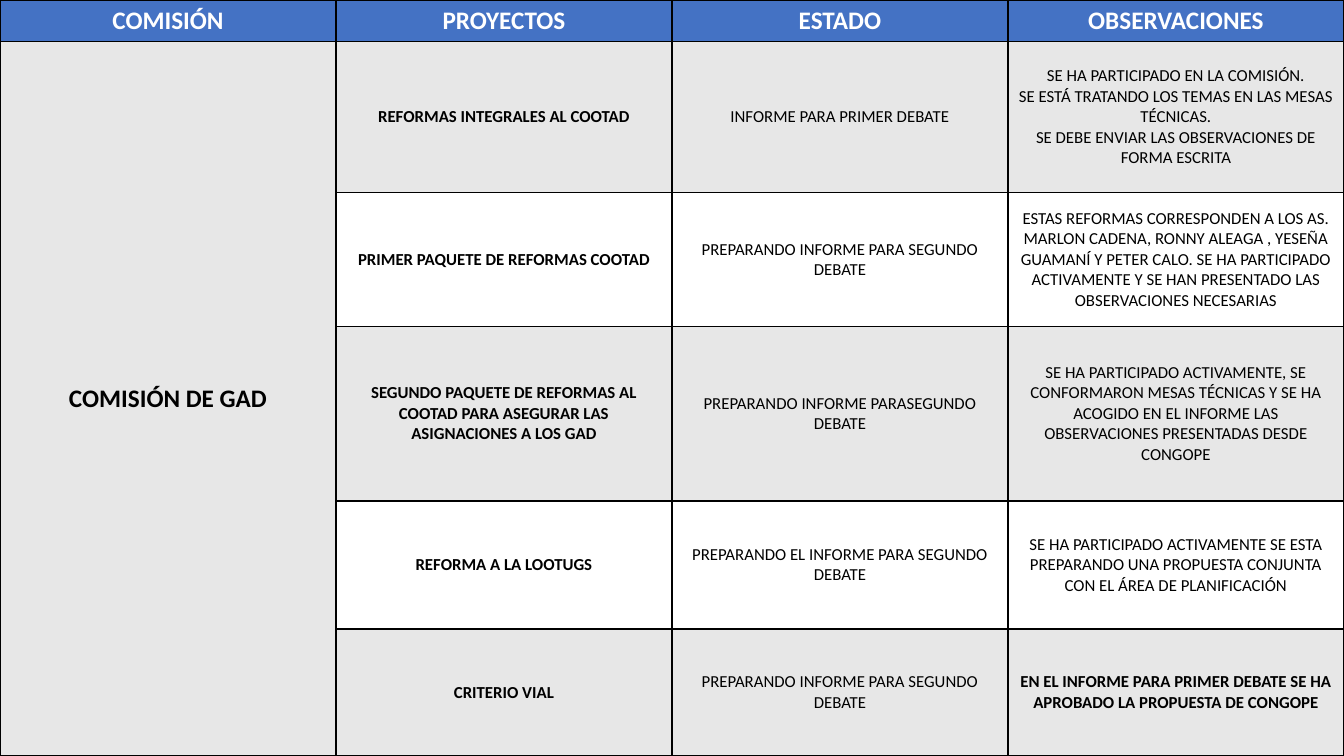
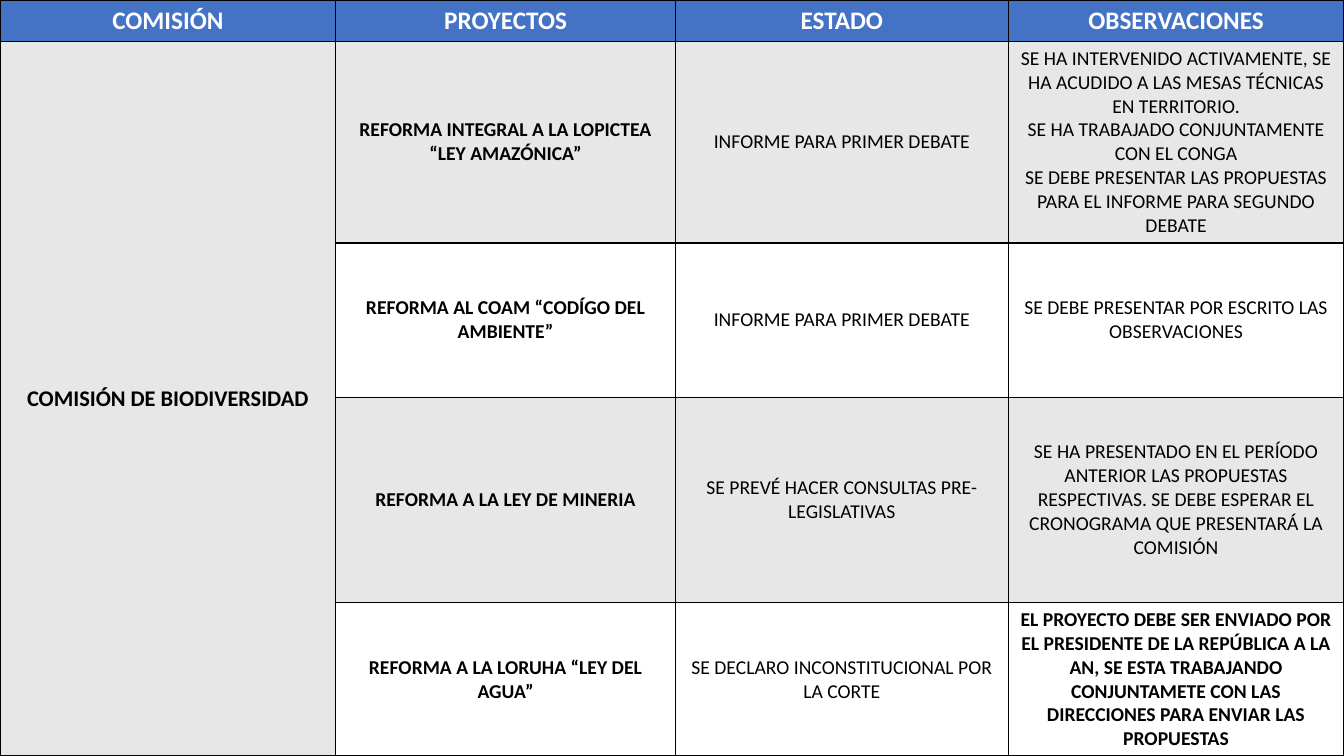
import pptx
import pptx.util
import pptx.dml.color
import pptx.enum.text
import pptx.oxml
import pptx.oxml.ns

Inches = pptx.util.Inches
SLIDE_W, SLIDE_H = 13.33, 7.5
FONT = "Calibri"
BLUE, GREY, WHITE, BLACK = "4472C4", "E7E7E7", "FFFFFF", "000000"
HEADERS = ["COMISIÓN", "PROYECTOS", "ESTADO", "OBSERVACIONES"]
HEADER_H, HEADER_SIZE = 0.41, 18

GAD = {
    "name": "COMISIÓN DE GAD",
    "name_size": 18,
    "body_size": 12,
    "widths": [SLIDE_W / 4] * 4,
    "heights": [1.5, 1.33, 1.73, 1.27, 1.26],
    "projects": [
        ("REFORMAS INTEGRALES AL COOTAD",
         "INFORME PARA PRIMER DEBATE",
         "SE HA PARTICIPADO EN LA COMISIÓN.\n"
         "SE ESTÁ TRATANDO LOS TEMAS EN LAS MESAS TÉCNICAS.\n"
         "SE DEBE ENVIAR LAS OBSERVACIONES DE FORMA ESCRITA"),
        ("PRIMER PAQUETE DE REFORMAS COOTAD",
         "PREPARANDO INFORME PARA SEGUNDO DEBATE",
         "ESTAS REFORMAS CORRESPONDEN A LOS AS. MARLON CADENA, RONNY ALEAGA , "
         "YESEÑA GUAMANÍ Y PETER CALO. SE HA PARTICIPADO ACTIVAMENTE Y SE HAN "
         "PRESENTADO LAS OBSERVACIONES NECESARIAS"),
        ("SEGUNDO PAQUETE DE REFORMAS AL COOTAD PARA ASEGURAR LAS "
         "ASIGNACIONES A LOS GAD",
         "PREPARANDO INFORME PARASEGUNDO DEBATE",
         "SE HA PARTICIPADO ACTIVAMENTE, SE CONFORMARON MESAS TÉCNICAS Y SE HA "
         "ACOGIDO EN EL INFORME LAS OBSERVACIONES PRESENTADAS DESDE CONGOPE"),
        ("REFORMA A LA LOOTUGS",
         "PREPARANDO EL INFORME PARA SEGUNDO DEBATE",
         "SE HA PARTICIPADO ACTIVAMENTE SE ESTA PREPARANDO UNA PROPUESTA "
         "CONJUNTA CON EL ÁREA DE PLANIFICACIÓN"),
        ("CRITERIO VIAL",
         "PREPARANDO INFORME PARA SEGUNDO DEBATE",
         "EN EL INFORME PARA PRIMER DEBATE SE HA APROBADO LA PROPUESTA DE CONGOPE"),
    ],
}

BIODIVERSIDAD = {
    "name": "COMISIÓN DE BIODIVERSIDAD",
    "name_size": 16,
    "body_size": 14,
    "widths": [3.33, 3.37, 3.3, 3.33],
    "heights": [2, 1.53, 2.04, 1.52],
    "projects": [
        ("REFORMA INTEGRAL A LA LOPICTEA\n“LEY AMAZÓNICA”",
         "INFORME PARA PRIMER DEBATE",
         "SE HA INTERVENIDO ACTIVAMENTE, SE HA ACUDIDO A LAS MESAS TÉCNICAS "
         "EN TERRITORIO.\n"
         "SE HA TRABAJADO CONJUNTAMENTE CON EL CONGA\n"
         "SE DEBE PRESENTAR LAS PROPUESTAS PARA EL INFORME PARA SEGUNDO DEBATE"),
        ("REFORMA AL COAM “CODÍGO DEL AMBIENTE”",
         "INFORME PARA PRIMER DEBATE",
         "SE DEBE PRESENTAR POR ESCRITO LAS OBSERVACIONES"),
        ("REFORMA A LA LEY DE MINERIA",
         "SE PREVÉ HACER CONSULTAS PRE-LEGISLATIVAS",
         "SE HA PRESENTADO EN EL PERÍODO ANTERIOR LAS PROPUESTAS RESPECTIVAS. "
         "SE DEBE ESPERAR EL CRONOGRAMA QUE PRESENTARÁ LA COMISIÓN"),
        ("REFORMA A LA LORUHA “LEY DEL AGUA”",
         "SE DECLARO INCONSTITUCIONAL POR LA CORTE",
         "EL PROYECTO DEBE SER ENVIADO POR EL PRESIDENTE DE LA REPÚBLICA A LA "
         "AN, SE ESTA TRABAJANDO CONJUNTAMETE CON LAS DIRECCIONES PARA ENVIAR "
         "LAS PROPUESTAS"),
    ],
}


def rgb(color):
    return pptx.dml.color.RGBColor.from_string(color)


def style_cell(cell, fill):
    tcPr = cell._tc.get_or_add_tcPr()
    for side in ("lnL", "lnR", "lnT", "lnB"):
        tcPr.append(pptx.oxml.parse_xml(
            f'<a:{side} {pptx.oxml.ns.nsdecls("a")} w="{pptx.util.Pt(1)}">'
            f'<a:solidFill><a:srgbClr val="{BLACK}"/></a:solidFill></a:{side}>'))
    cell.fill.solid()
    cell.fill.fore_color.rgb = rgb(fill)


def write_cell(cell, text, size, bold, color=BLACK,
               anchor=pptx.enum.text.MSO_ANCHOR.MIDDLE):
    cell.vertical_anchor = anchor
    tf = cell.text_frame
    tf.text = text
    for p in tf.paragraphs:
        p.alignment = pptx.enum.text.PP_ALIGN.CENTER
        for r in p.runs:
            r.font.name = FONT
            r.font.size = pptx.util.Pt(size)
            r.font.bold = bold
            r.font.color.rgb = rgb(color)


def add_commission_table(s, commission, x, y, w, h):
    projects = commission["projects"]
    last = len(projects)
    table = s.shapes.add_table(last + 1, len(HEADERS), Inches(x), Inches(y),
                               Inches(w), Inches(h)).table
    table.first_row = table.horz_banding = False
    widths = commission["widths"]
    for column, width in zip(table.columns, widths):
        column.width = Inches(w * width / sum(widths))
    heights = [HEADER_H] + commission["heights"]
    for row, height in zip(table.rows, heights):
        row.height = Inches(h * height / sum(heights))

    for i, row in enumerate(table.rows):
        fill = BLUE if i == 0 else GREY if i % 2 else WHITE
        for cell in row.cells:
            style_cell(cell, fill)

    for j, header in enumerate(HEADERS):
        write_cell(table.cell(0, j), header, HEADER_SIZE, True, WHITE,
                   pptx.enum.text.MSO_ANCHOR.TOP)
    table.cell(1, 0).merge(table.cell(last, 0))
    write_cell(table.cell(1, 0), commission["name"], commission["name_size"], True)
    for i, project in enumerate(projects, 1):
        for j, text in enumerate(project, 1):
            bold = j == 1 or (i, j) == (last, 3)
            write_cell(table.cell(i, j), text, commission["body_size"], bold)


def main():
    prs = pptx.Presentation()
    prs.slide_width, prs.slide_height = Inches(SLIDE_W), Inches(SLIDE_H)
    for commission in (GAD, BIODIVERSIDAD):
        s = prs.slides.add_slide(prs.slide_layouts[6])
        add_commission_table(s, commission, 0, 0, SLIDE_W, SLIDE_H)
    prs.save("out.pptx")


if __name__ == "__main__":
    main()
